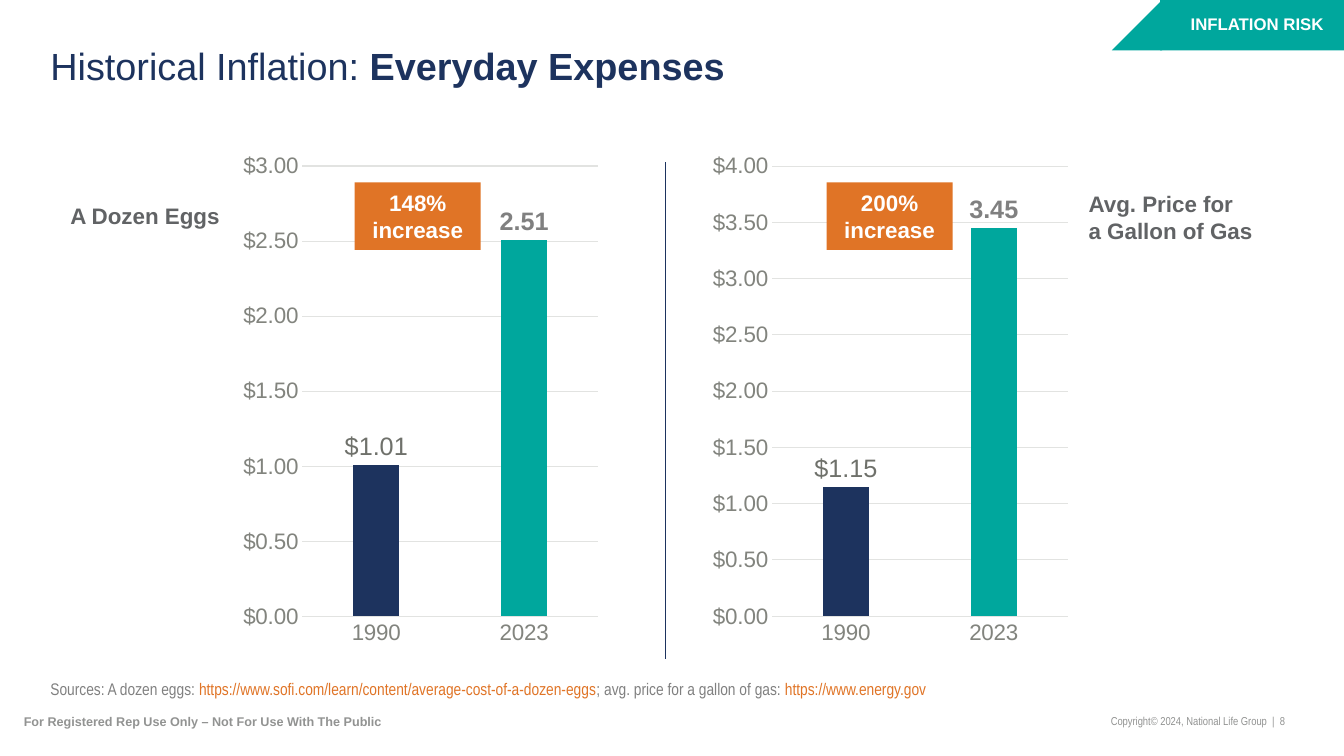
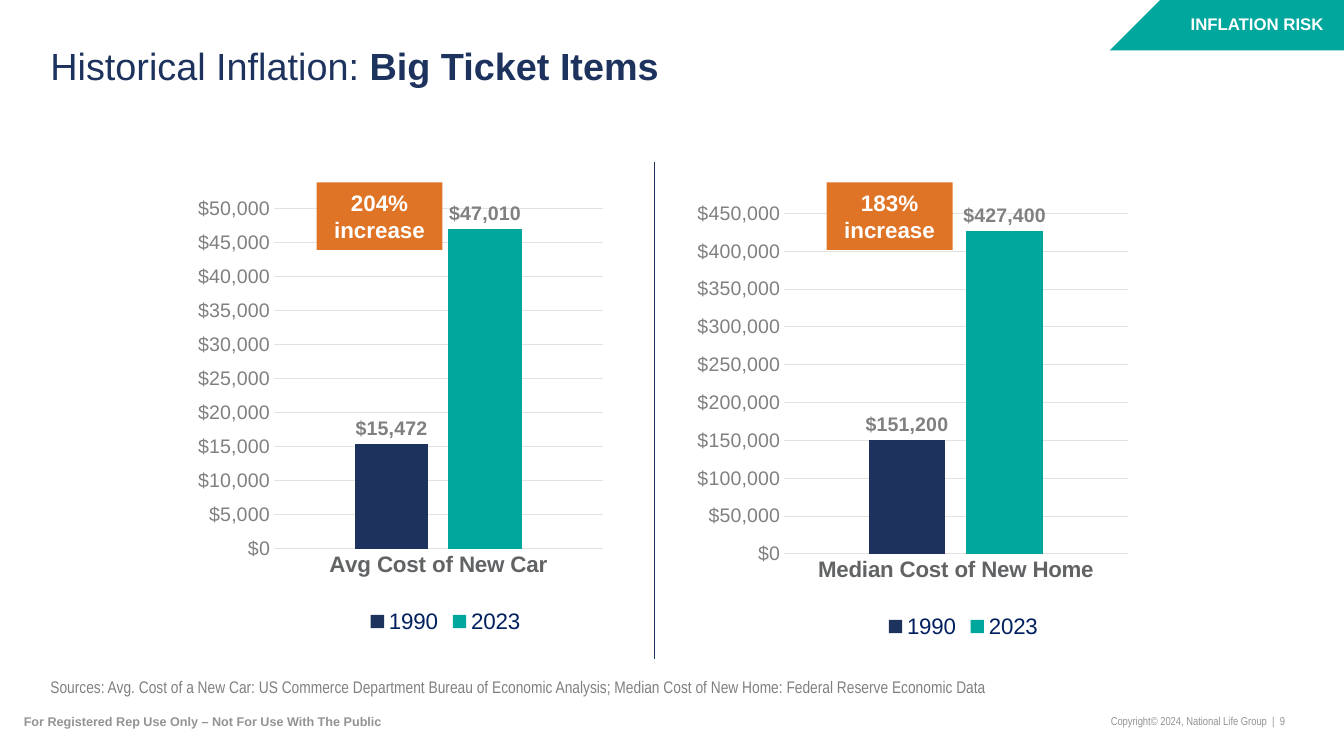
from dataclasses import dataclass

from lxml import etree
from pptx import Presentation
from pptx.chart.data import CategoryChartData
from pptx.dml.color import RGBColor
from pptx.enum import chart as charts, shapes, text
from pptx.oxml.ns import qn
from pptx.util import Pt


@dataclass(frozen=True)
class Theme:
    navy: str = "1D335E"
    teal: str = "00A79D"
    orange: str = "E07426"
    white: str = "FFFFFF"
    label: str = "616365"
    grey: str = "808080"
    axis: str = "82847E"
    value: str = "6F716B"
    footer: str = "929392"
    legend: str = "002060"
    grid: str = "E2E3E1"
    font: str = "Arial"
    narrow: str = "Arial Narrow"
    title_size: float = 27
    large_size: float = 18
    body_size: float = 16
    axis_size: float = 14
    small_size: float = 12
    notice_size: float = 9
    copyright_size: float = 8.2


THEME = Theme()
LEFT, CENTER, RIGHT = text.PP_ALIGN.LEFT, text.PP_ALIGN.CENTER, text.PP_ALIGN.RIGHT

TAG = "INFLATION RISK"
NOTICE = "For Registered Rep Use Only – Not For Use With The Public"
COPYRIGHT = "Copyright© 2024, National Life Group  |  {}"
TITLE_START = "Historical Inflation: "

# Each label: position, alignment, lines. Each badge: left edge, text.
SLIDES = [
    {
        "number": 8,
        "title": "Everyday Expenses",
        "slant_left": 794.2,
        "divider": 475.2,
        "charts": [
            {"place": (169.2, 105.1, 306, 365.8), "categories": ["1990", "2023"],
             "series": {"Series 1": [1.01, 2.51]}, "top": 3, "step": 0.5},
            {"place": (504.7, 105.1, 306, 365.8), "categories": ["1990", "2023"],
             "series": {"Series 1": [1.15, 3.45]}, "top": 4, "step": 0.5},
        ],
        "badges": [(253.4, "148% increase"), (590.4, "200% increase")],
        "labels": [
            ((33.8, 140.4, 123.1, 27.4), RIGHT, ["A Dozen Eggs"]),
            ((777.6, 135.4, 172.1, 38.9), LEFT, ["Avg. Price for", "a Gallon of Gas"]),
        ],
        "sources_top": 484.6,
        "sources": [
            ("Sources: A dozen eggs: ", THEME.grey),
            ("https://www.sofi.com/learn/content/average-cost-of-a-dozen-eggs", THEME.orange),
            ("; avg. price for a gallon of gas: ", THEME.grey),
            ("https://www.energy.gov", THEME.orange),
        ],
    },
    {
        "number": 9,
        "title": "Big Ticket Items",
        "slant_left": 792.7,
        "divider": 467.3,
        "charts": [
            {"place": (138.2, 136.1, 360, 319.7), "categories": ["Avg Cost of New Car"],
             "series": {"1990": [15472], "2023": [47010]}, "top": 50000, "step": 5000},
            {"place": (498.2, 139.7, 378, 319.7), "categories": ["Median Cost of New Home"],
             "series": {"1990": [151200], "2023": [427400]}, "top": 450000, "step": 50000},
        ],
        "badges": [(226.1, "204% increase"), (590.4, "183% increase")],
        "labels": [],
        "sources_top": 483.4,
        "sources": [
            ("Sources: Avg. Cost of a New Car: US Commerce Department Bureau of Economic "
             "Analysis; Median Cost of New Home: Federal Reserve Economic Data", THEME.grey),
        ],
    },
]


def points(values):
    return [Pt(value) for value in values]


def style_font(font, size, color, bold=False, name=THEME.font):
    font.size, font.bold, font.name = Pt(size), bold, name
    font.color.rgb = RGBColor.from_string(color)


def paint(fill, color):
    fill.solid()
    fill.fore_color.rgb = RGBColor.from_string(color)


def set_frame(frame, insets=(0, 0, 0, 0), wrap=True):
    frame.margin_left, frame.margin_top, frame.margin_right, frame.margin_bottom = points(insets)
    frame.word_wrap = wrap
    frame.auto_size = text.MSO_AUTO_SIZE.NONE
    frame.vertical_anchor = text.MSO_ANCHOR.MIDDLE


def add_text(page, place, lines, size, color, align=LEFT, bold=False,
             name=THEME.font, insets=(0, 0, 0, 0), wrap=True):
    """Add a text box; each line is a string or a list of (text, color) spans."""
    frame = page.shapes.add_textbox(*points(place)).text_frame
    set_frame(frame, insets, wrap)
    for index, line in enumerate(lines):
        para = frame.add_paragraph() if index else frame.paragraphs[0]
        para.alignment = align
        for words, span_color in [(line, color)] if isinstance(line, str) else line:
            span = para.add_run()
            span.text = words
            style_font(span.font, size, span_color, bold, name)


def add_block(page, kind, place, color):
    block = page.shapes.add_shape(kind, *points(place))
    block.shadow.inherit = False
    paint(block.fill, color)
    block.line.fill.background()
    return block


def add_title(page, ending):
    title = page.shapes.title
    title.left, title.top, title.width, title.height = points((0, 19.4, 960, 58.3))
    set_frame(title.text_frame, (36, 14.4, 36, 14.4))
    para = title.text_frame.paragraphs[0]
    para.alignment, para.line_spacing = LEFT, 0.9
    for words, bold in ((TITLE_START, False), (ending, True)):
        span = para.add_run()
        span.text = words
        style_font(span.font, THEME.title_size, THEME.navy, bold)


def add_tag(page, slant_left):
    add_block(page, shapes.MSO_SHAPE.RECTANGLE, (828.7, 0, 131.3, 36), THEME.teal)
    slant = add_block(page, shapes.MSO_SHAPE.RIGHT_TRIANGLE, (slant_left, 0, 36, 36), THEME.teal)
    slant.rotation = 270
    add_text(page, (811.4, 10.1, 148.6, 14.4), [TAG], THEME.small_size, THEME.white,
             RIGHT, True, insets=(0, 0, 14.4, 0))


def add_footer(page, number):
    add_text(page, (15.8, 509.8, 257.8, 10.8), [NOTICE], THEME.notice_size, THEME.footer,
             CENTER, True, wrap=False)
    add_text(page, (787, 509.8, 131, 10.1), [COPYRIGHT.format(number)],
             THEME.copyright_size, THEME.footer, RIGHT, name=THEME.narrow, wrap=False)


def add_badge(page, left, words):
    badge = add_block(page, shapes.MSO_SHAPE.RECTANGLE, (left, 130.3, 90, 48.2), THEME.orange)
    set_frame(badge.text_frame, (7.2, 3.6, 7.2, 3.6))
    para = badge.text_frame.paragraphs[0]
    para.text, para.alignment = words, CENTER
    style_font(para.runs[0].font, THEME.body_size, THEME.white, True)


def add_divider(page, x):
    line = page.shapes.add_connector(shapes.MSO_CONNECTOR.STRAIGHT,
                                     *points((x, 115.9, x, 470.9)))
    line.line.width = Pt(0.5)
    line.line.color.rgb = RGBColor.from_string(THEME.navy)
    etree.SubElement(line.element.spPr, qn("a:effectLst"))


def place_plot(chart, x, y, w, h):
    """Fix the inner plot area, in fractions of the chart."""
    area = chart.plots[0]._element.getparent()
    for old in area.findall(qn("c:layout")):
        area.remove(old)
    layout = etree.Element(qn("c:layout"))
    area.insert(0, layout)
    manual = etree.SubElement(layout, qn("c:manualLayout"))
    settings = {"layoutTarget": "inner", "xMode": "edge", "yMode": "edge",
                "x": x, "y": y, "w": w, "h": h}
    for key, value in settings.items():
        etree.SubElement(manual, qn(f"c:{key}")).set("val", str(value))


def style_axes(chart, top, step, number_format, paired):
    grid_color = RGBColor.from_string(THEME.grid)
    category, value = chart.category_axis, chart.value_axis
    for axis in (category, value):
        axis.major_tick_mark = axis.minor_tick_mark = charts.XL_TICK_MARK.NONE
    category.has_major_gridlines = False
    value.minimum_scale, value.maximum_scale, value.major_unit = 0, top, step
    value.has_major_gridlines = True
    for line in (category.format.line, value.major_gridlines.format.line):
        line.color.rgb, line.width = grid_color, Pt(0.75)
    value.format.line.fill.background()
    value.tick_labels.number_format = number_format
    value.tick_labels.number_format_is_linked = False
    style_font(category.tick_labels.font, THEME.body_size,
               THEME.label if paired else THEME.axis, paired)
    style_font(value.tick_labels.font, THEME.axis_size if paired else THEME.body_size,
               THEME.grey if paired else THEME.axis)


def highlight_last(series, value):
    """Give the last bar of a lone series its own color and bold label."""
    point = series.points[len(series.values) - 1]
    paint(point.format.fill, THEME.teal)
    label = point.data_label
    label.text_frame.text = f"{value:.2f}"
    style_font(label.text_frame.paragraphs[0].runs[0].font, THEME.large_size, THEME.grey, True)
    label.position = charts.XL_LABEL_POSITION.OUTSIDE_END


def add_column_chart(page, place, categories, series, top, step):
    paired = len(series) > 1
    number_format = '"$"#,##0' if paired else '"$"#,##0.00'
    data = CategoryChartData()
    data.categories = categories
    for name, values in series.items():
        data.add_series(name, values)
    chart = page.shapes.add_chart(charts.XL_CHART_TYPE.COLUMN_CLUSTERED,
                                  *points(place), data).chart
    style_font(chart.font, THEME.body_size, THEME.grey)
    chart.has_title = False
    chart.has_legend = paired
    if paired:
        chart.legend.position = charts.XL_LEGEND_POSITION.BOTTOM
        chart.legend.include_in_layout = False
        style_font(chart.legend.font, THEME.body_size, THEME.legend)
    style_axes(chart, top, step, number_format, paired)
    place_plot(chart, *((0.16, 0.04, 0.652, 0.761) if paired else (0.153, 0.037, 0.69, 0.879)))

    plot = chart.plots[0]
    plot.gap_width, plot.overlap, plot.vary_by_categories = 219, -27, False
    for bars, color in zip(plot.series, (THEME.navy, THEME.teal)):
        paint(bars.format.fill, color)
        bars.invert_if_negative = False
        labels = bars.data_labels
        labels.show_value = True
        labels.number_format, labels.number_format_is_linked = number_format, False
        labels.position = charts.XL_LABEL_POSITION.OUTSIDE_END
        style_font(labels.font, THEME.axis_size if paired else THEME.large_size,
                   THEME.grey if paired else THEME.value, paired)
        if not paired:
            highlight_last(bars, bars.values[-1])


def build_page(deck, content):
    page = deck.slides.add_slide(deck.slide_layouts[5])
    add_title(page, content["title"])
    for chart in content["charts"]:
        add_column_chart(page, **chart)
    for left, words in content["badges"]:
        add_badge(page, left, words)
    for place, align, lines in content["labels"]:
        add_text(page, place, lines, THEME.body_size, THEME.label, align, True)
    add_divider(page, content["divider"])
    add_text(page, (0, content["sources_top"], 960, 14.4), [content["sources"]],
             THEME.small_size, THEME.grey, name=THEME.narrow, insets=(36, 0, 36, 0))
    add_footer(page, content["number"])
    add_tag(page, content["slant_left"])


def main():
    deck = Presentation()
    deck.slide_width, deck.slide_height = Pt(960), Pt(540)
    for content in SLIDES:
        build_page(deck, content)
    deck.save("out.pptx")


if __name__ == "__main__":
    main()
